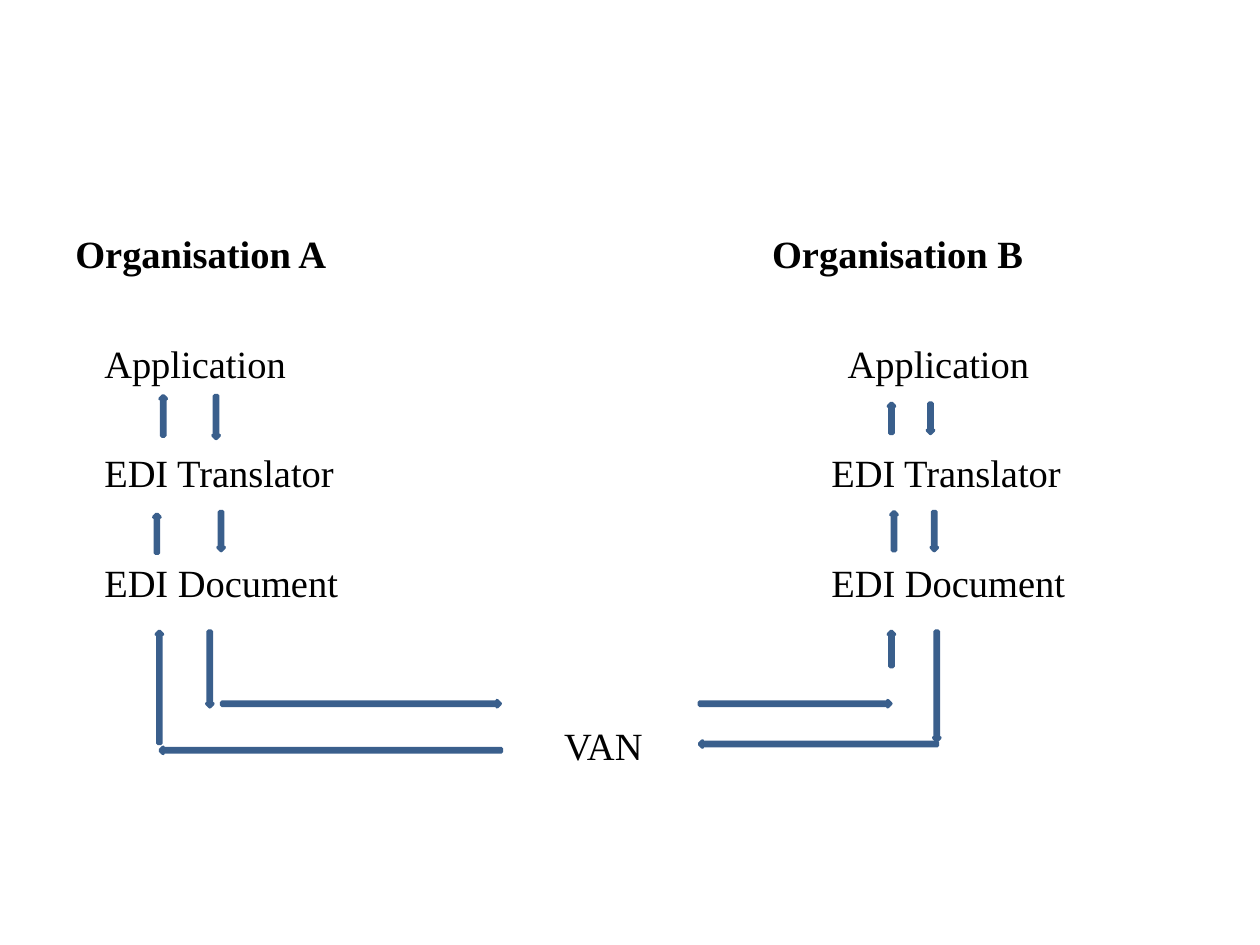
import pptx
import pptx.dml.color
import pptx.enum.shapes
import pptx.enum.text
import pptx.util
from lxml import etree

presentation = pptx.Presentation()
presentation.slide_width = pptx.util.Inches(10)
presentation.slide_height = pptx.util.Inches(7.5)
slide = presentation.slides.add_slide(presentation.slide_layouts[6])

# Grid of 100 columns by 75 rows, in square cells
CELL = presentation.slide_width // 100
THICKNESS = 0.5
SHAPES = pptx.enum.shapes.MSO_SHAPE


def color(value):
    return pptx.dml.color.RGBColor.from_string(value)


def add_tabs(paragraph, columns):
    properties = paragraph._p.get_or_add_pPr()
    namespace = "{http://schemas.openxmlformats.org/drawingml/2006/main}"
    tab_list = etree.SubElement(properties, namespace + "tabLst")
    for column in columns:
        etree.SubElement(tab_list, namespace + "tab", pos=str(int(column * CELL)), algn="l")


# Labels of both organisations: text, tab stops in columns, space before in points
labels = [
    ("Organisation A\tOrganisation B", [55.3], 0),
    ("\tApplication\tApplication", [2.3, 61.3], 36.1),
    ("\tEDI Translator\tEDI Translator", [2.3, 60], 36.1),
    ("\tEDI Document\tEDI Document", [2.3, 60], 36.1),
    ("\tVAN", [38.8], 66.8),
]
body = slide.shapes.add_textbox(5 * CELL, int(17.8 * CELL), 90 * CELL, int(49.5 * CELL))
text_frame = body.text_frame
text_frame.word_wrap = True
text_frame.vertical_anchor = pptx.enum.text.MSO_ANCHOR.TOP
for index, (text, tabs, space) in enumerate(labels):
    paragraph = text_frame.paragraphs[0] if index == 0 else text_frame.add_paragraph()
    paragraph.text = text
    paragraph.space_before = pptx.util.Pt(space)
    add_tabs(paragraph, tabs)
    for run in paragraph.runs:
        run.font.name = "Times New Roman"
        run.font.size = pptx.util.Pt(22)
        run.font.bold = index == 0
        run.font.color.rgb = color("000000")

# Arrows by direction: left column, top row, length in cells
arrows = {
    SHAPES.DOWN_ARROW: [
        (16.9, 31.4, 3.4), (17.3, 40.6, 3.1), (16.4, 50.1, 6),
        (73.6, 32, 2.4), (73.9, 40.6, 3.1), (74.1, 50.1, 8.7),
    ],
    SHAPES.UP_ARROW: [
        (12.7, 31.4, 3.2), (12.2, 40.8, 3.1), (12.4, 50.1, 8.9),
        (70.5, 32, 2.4), (70.7, 40.6, 3.1), (70.5, 50.1, 2.8),
    ],
    SHAPES.RIGHT_ARROW: [(17.6, 55.6, 22.1), (55.5, 55.6, 15.2)],
    SHAPES.LEFT_ARROW: [(55.5, 58.8, 18.9), (12.7, 59.3, 27.1)],
}
for direction, places in arrows.items():
    vertical = direction in (SHAPES.DOWN_ARROW, SHAPES.UP_ARROW)
    for column, row, length in places:
        width, height = (THICKNESS, length) if vertical else (length, THICKNESS)
        box = [int(value * CELL) for value in (column, row, width, height)]
        arrow = slide.shapes.add_shape(direction, *box)
        arrow.shadow.inherit = False
        arrow.fill.solid()
        arrow.fill.fore_color.rgb = color("4F81BD")
        arrow.line.color.rgb = color("3A5F8C")
        arrow.line.width = pptx.util.Pt(2)

presentation.save("out.pptx")
